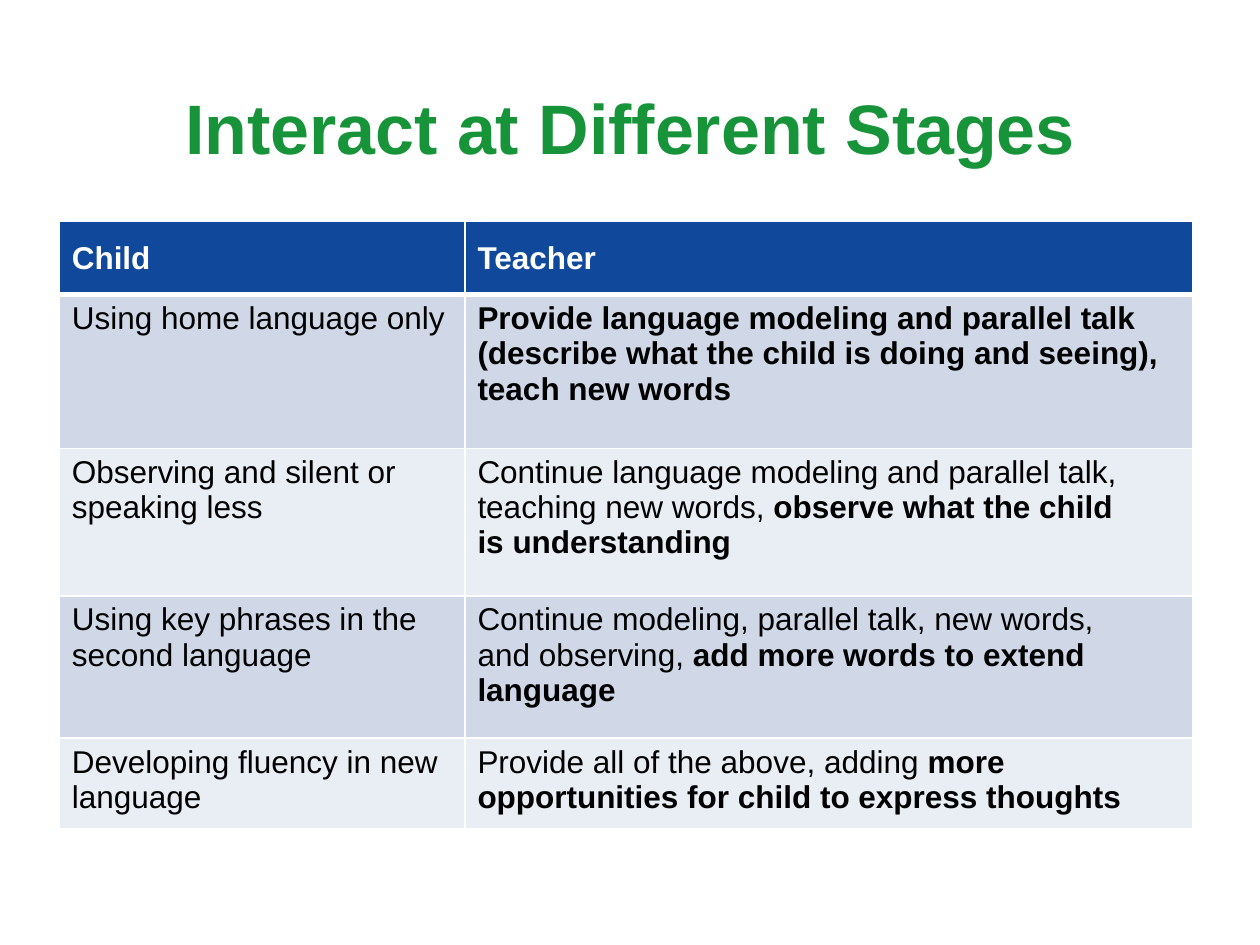
from dataclasses import dataclass

from lxml import etree
from pptx import Presentation
from pptx import util as u
from pptx.dml.color import RGBColor
from pptx.enum import text
from pptx.oxml.ns import qn

GREEN = RGBColor(0x17, 0x93, 0x39)
BLUE = RGBColor(0x10, 0x48, 0x9C)
WHITE = RGBColor(0xFF, 0xFF, 0xFF)
BLACK = RGBColor(0, 0, 0)
BANDS = (RGBColor(0xD0, 0xD8, 0xE8), RGBColor(0xE9, 0xED, 0xF4))

SLIDE_WIDTH, SLIDE_HEIGHT = u.Inches(10), u.Inches(7.5)
COLUMN_WIDTHS = (3.22, 5.78)
HEADINGS = ("Child", "Teacher")
HEADING_HEIGHT = 0.58


@dataclass(frozen=True)
class Stage:
    child: str
    teacher: str      # practice carried over from earlier stages
    emphasis: str     # practice that is new at this stage
    height: float


STAGES = (
    Stage("Using home language only", "",
          "Provide language modeling and parallel talk (describe what the child "
          "is doing and seeing), teach new words", 1.22),
    Stage("Observing and silent or speaking less",
          "Continue language modeling and parallel talk, teaching new words, ",
          "observe what the child \nis understanding", 1.17),
    Stage("Using key phrases in the second language",
          "Continue modeling, parallel talk, new words, \nand observing, ",
          "add more words to extend language", 1.13),
    Stage("Developing fluency in new language",
          "Provide all of the above, adding ",
          "more opportunities for child to express thoughts", 0.72),
)


def style(font, size: float, color: RGBColor) -> None:
    font.name, font.size = "Arial", u.Pt(size)
    font.color.rgb = color


def add_words(paragraph, words: str, size: float, color: RGBColor, bold: bool) -> None:
    """Add words to a paragraph, with a line break at each newline."""
    for index, line in enumerate(words.split("\n")):
        if index:
            paragraph.add_line_break()
        run = paragraph.add_run()
        run.text = line
        style(run.font, size, color)
        run.font.bold = bold


def set_borders(cell, top: float = 1, bottom: float = 1) -> None:
    """Rule a cell in white; the fill must come after the lines."""
    properties = cell._tc.get_or_add_tcPr()
    widths = {"lnL": 1, "lnR": 1, "lnT": top, "lnB": bottom}
    for index, (side, width) in enumerate(widths.items()):
        line = etree.Element(qn(f"a:{side}"), w=str(u.Pt(width)))
        solid = etree.SubElement(line, qn("a:solidFill"))
        etree.SubElement(solid, qn("a:srgbClr"), val=str(WHITE))
        properties.insert(index, line)


def fill_cell(cell, parts, fill: RGBColor, color: RGBColor) -> None:
    cell.fill.solid()
    cell.fill.fore_color.rgb = fill
    for words, bold in parts:
        if words:
            add_words(cell.text_frame.paragraphs[0], words, 18, color, bold)


def add_title(slide) -> None:
    box = slide.shapes.add_textbox(0, u.Inches(0.38), SLIDE_WIDTH, u.Inches(1.25))
    frame = box.text_frame
    frame.word_wrap = True
    frame.vertical_anchor = text.MSO_ANCHOR.MIDDLE
    heading = frame.paragraphs[0]
    heading.text = "Interact at Different Stages"
    heading.alignment = text.PP_ALIGN.CENTER
    style(heading.font, 40, GREEN)
    heading.font.bold = True


def add_stage_table(slide) -> None:
    heights = [HEADING_HEIGHT] + [stage.height for stage in STAGES]
    table = slide.shapes.add_table(
        len(heights), len(COLUMN_WIDTHS), u.Inches(0.47), u.Inches(1.76),
        u.Inches(sum(COLUMN_WIDTHS)), u.Inches(sum(heights))).table
    for column, width in zip(table.columns, COLUMN_WIDTHS):
        column.width = u.Inches(width)
    for row, height in zip(table.rows, heights):
        row.height = u.Inches(height)

    # Heading row, set off by a thick rule
    for cell, heading in zip(table.rows[0].cells, HEADINGS):
        fill_cell(cell, [(heading, True)], BLUE, WHITE)
        cell.vertical_anchor = text.MSO_ANCHOR.MIDDLE
        set_borders(cell, bottom=3)

    # One banded row for each stage
    for index, stage in enumerate(STAGES):
        child, teacher = table.rows[index + 1].cells
        band = BANDS[index % 2]
        fill_cell(child, [(stage.child, False)], band, BLACK)
        fill_cell(teacher, [(stage.teacher, False), (stage.emphasis, True)], band, BLACK)
        for cell in (child, teacher):
            set_borders(cell, top=1 if index else 3)


def main() -> None:
    deck = Presentation()
    deck.slide_width, deck.slide_height = SLIDE_WIDTH, SLIDE_HEIGHT
    slide = deck.slides.add_slide(deck.slide_layouts[6])
    add_title(slide)
    add_stage_table(slide)
    deck.save("out.pptx")


if __name__ == "__main__":
    main()
